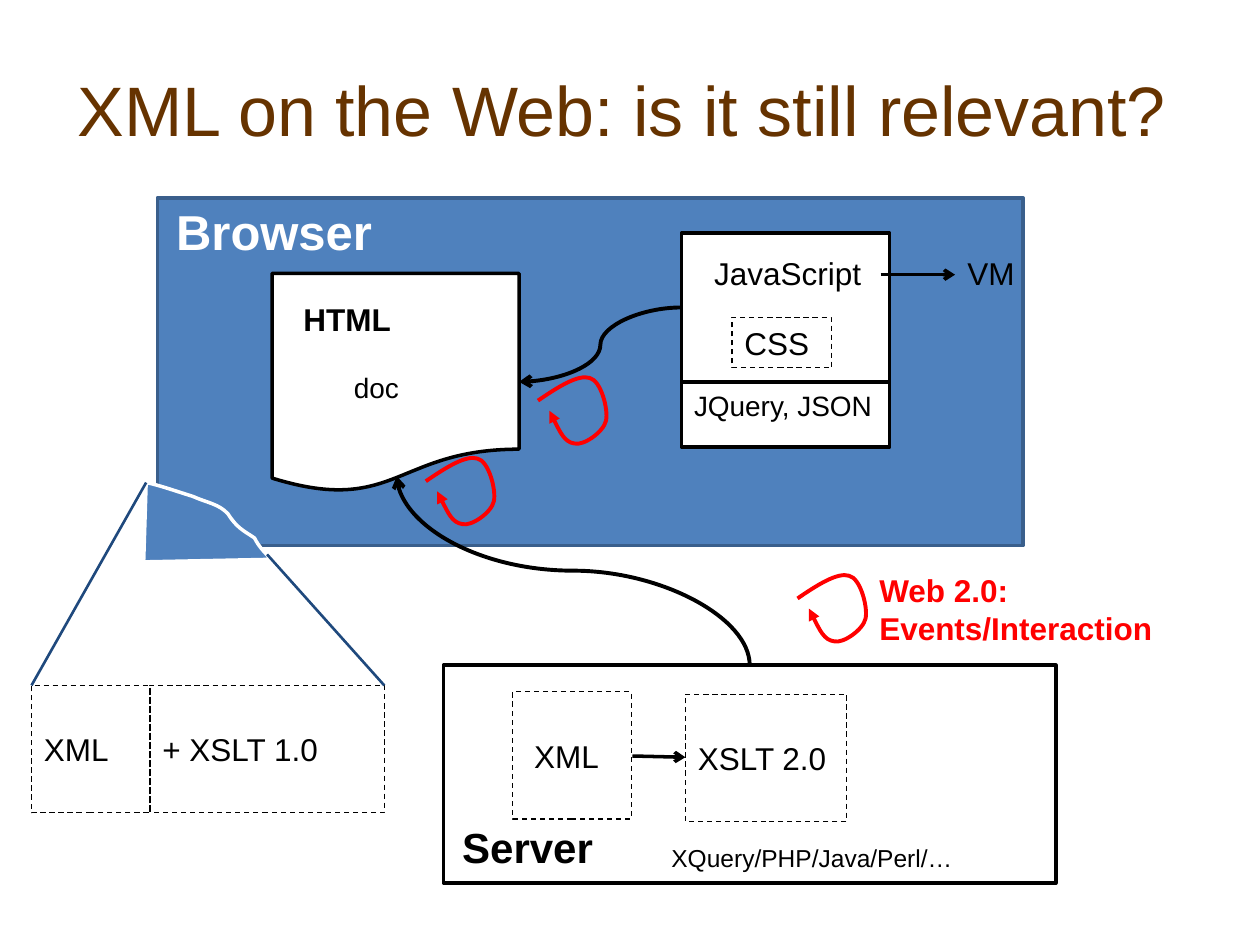
from lxml import etree
from pptx import Presentation
from pptx.dml.color import RGBColor
from pptx.enum.dml import MSO_LINE
from pptx.enum.shapes import MSO_CONNECTOR, MSO_SHAPE
from pptx.enum.text import MSO_ANCHOR, PP_ALIGN
from pptx.oxml.ns import qn
from pptx.util import Inches, Pt

RECT, DOCUMENT = MSO_SHAPE.RECTANGLE, MSO_SHAPE.FLOWCHART_DOCUMENT
STRAIGHT, CURVE = MSO_CONNECTOR.STRAIGHT, MSO_CONNECTOR.CURVE
DASH, MIDDLE = MSO_LINE.DASH, MSO_ANCHOR.MIDDLE
LEFT, CENTER = PP_ALIGN.LEFT, PP_ALIGN.CENTER

BLACK = RGBColor(0x00, 0x00, 0x00)
WHITE = RGBColor(0xFF, 0xFF, 0xFF)
BLUE = RGBColor(0x4F, 0x81, 0xBD)
EDGE = RGBColor(0x3A, 0x5F, 0x8C)
NAVY = RGBColor(0x1F, 0x49, 0x7D)
RED = RGBColor(0xFF, 0x00, 0x00)
BROWN = RGBColor(0x66, 0x33, 0x00)

prs = Presentation()
prs.slide_width, prs.slide_height = Inches(10), Inches(7.5)
COL, ROW = prs.slide_width / 100, prs.slide_height / 75
s = prs.slides.add_slide(prs.slide_layouts[6])


def write(text, x, y, w, h, shape=None, fill=None, line=None, width=2, dash=None,
          size=18, color=BLACK, bold=False, align=LEFT, indent=1, wrap=True):
    at = [round(v) for v in (x * COL, y * ROW, w * COL, h * ROW)]
    if shape is None:
        sp = s.shapes.add_textbox(*at)
    else:
        sp = s.shapes.add_shape(shape, *at)
        sp.shadow.inherit = False
        sp.line.color.rgb = line
        sp.line.width = Pt(width)
        if dash is not None:
            sp.line.dash_style = dash
        if fill is None:
            sp.fill.background()
        else:
            sp.fill.solid()
            sp.fill.fore_color.rgb = fill
    if text:
        tf = sp.text_frame
        tf.word_wrap = wrap
        tf.vertical_anchor = MIDDLE
        tf.margin_left = round(indent * COL)
        p = tf.paragraphs[0]
        p.alignment = align
        r = p.add_run()
        r.text = text
        r.font.name, r.font.size, r.font.bold = "Arial", Pt(size), bold
        r.font.color.rgb = color


def draw_curve(start, controls, corners=(), fill=None, line=RED, width=2.25):
    points = [(x * COL, y * ROW) for x, y in (start, *controls, *corners)]
    fb = s.shapes.build_freeform(*points[0])
    fb.add_line_segments(points[1:], close=bool(corners))
    sp = fb.convert_to_shape()
    segments = list(sp._element.iter(qn("a:lnTo")))[:len(controls)]
    for i in range(0, len(segments), 3):
        cubic = etree.Element(qn("a:cubicBezTo"))
        segments[i].addprevious(cubic)
        for segment in segments[i:i + 3]:
            cubic.append(segment[0])
            segment.getparent().remove(segment)
    sp.shadow.inherit = False
    sp.line.color.rgb = line
    sp.line.width = Pt(width)
    if fill is None:
        sp.fill.background()
        ln = sp._element.spPr.find(qn("a:ln"))
        etree.SubElement(ln, qn("a:tailEnd"), type="triangle")
    else:
        sp.fill.solid()
        sp.fill.fore_color.rgb = fill


write("XML on the Web: is it still relevant?", 3.1, 1.4, 92.5, 14.4,
      size=40, color=BROWN, align=CENTER, wrap=False)

write("", 12.5, 15.7, 68.7, 27.6, RECT, BLUE, EDGE)
write("", 21.6, 21.7, 19.6, 17.4, DOCUMENT, WHITE, BLACK)
write("Browser", 13, 15.5, 22.4, 5.7, size=28, color=WHITE, bold=True)
write("HTML", 23.1, 23.3, 15, 4, bold=True)
write("doc", 27.1, 28.9, 8.7, 3.7, size=16)

write("", 35.2, 52.8, 48.6, 17.3, RECT, WHITE, BLACK)
write("Server", 35.7, 64.7, 22, 5, size=24, bold=True)
write("XML", 40.7, 54.9, 9.4, 10.1, RECT, line=BLACK, width=0.75, dash=DASH, indent=1.7)
write("XSLT 2.0", 54.4, 55.1, 12.8, 10.1, RECT, line=BLACK, width=0.75, dash=DASH)
write("XQuery/PHP/Java/Perl/…", 52.3, 66.4, 29.9, 3.4, size=14)

write("", 54.1, 18.5, 16.5, 11.8, RECT, WHITE, BLACK)
write("", 54.1, 30.3, 16.5, 5.2, RECT, WHITE, BLACK)
write("JavaScript", 55.7, 19.7, 14.2, 4)
write("CSS", 58.1, 25.2, 7.9, 4, RECT, line=BLACK, width=0.75, dash=DASH)
write("JQuery, JSON", 54.1, 30.3, 16.5, 3.7, size=16)
write("VM", 75.8, 19.7, 5.8, 4, wrap=False)

write("XML", 2.5, 54.4, 9.4, 10.1, RECT, line=BLACK, width=0.75, dash=DASH)
write("+ XSLT 1.0", 11.9, 54.4, 18.6, 10.1, RECT, line=BLACK, width=0.75, dash=DASH)
write("Web 2.0: Events/Interaction", 68.8, 44.8, 32.2, 7, color=RED, bold=True)

LOOP = [(1.6, -1.1), (3.2, -2.1), (4.1, -1.8), (5, -1.6), (5.6, 0.7), (5.4, 1.6),
        (5.2, 2.5), (3.6, 3.6), (2.9, 3.4), (2.1, 3.3), (1.5, 2), (0.9, 0.8)]
for x, y in [(42.7, 31.8), (33.8, 38.2), (63.3, 47.5)]:
    draw_curve((x, y), [(x + dx, y + dy) for dx, dy in LOOP])

TORN_EDGE = [(12.6, 38.5), (14, 39), (15.3, 39.4), (16.4, 39.9), (17.4, 40), (18.1, 40.8),
             (18.8, 41.9), (19.3, 42.1), (20.2, 42.7), (20.6, 43.5), (21, 43.8), (21.5, 44.4)]
draw_curve((11.6, 38.3), TORN_EDGE, [(11.4, 44.6)], fill=BLUE, line=WHITE, width=2)

for kind, x1, y1, x2, y2, color, width, arrow, turn in [
    (STRAIGHT, 50.2, 60, 54.4, 60.1, BLACK, 2, True, 0),
    (STRAIGHT, 69.9, 21.8, 75.8, 21.8, BLACK, 2, True, 0),
    (CURVE, 54.1, 24.4, 41.2, 30.3, BLACK, 2.25, True, 0),
    (CURVE, 38, 59.3, 53, 31.3, BLACK, 2.25, True, 270),
    (STRAIGHT, 11.6, 38.3, 2.5, 54.4, NAVY, 1.5, False, 0),
    (STRAIGHT, 21.2, 44, 30.5, 54.4, NAVY, 1.5, False, 0),
]:
    sp = s.shapes.add_connector(
        kind, round(x1 * COL), round(y1 * ROW), round(x2 * COL), round(y2 * ROW))
    sp.line.color.rgb = color
    sp.line.width = Pt(width)
    spPr = sp._element.spPr
    if arrow:
        etree.SubElement(spPr.find(qn("a:ln")), qn("a:tailEnd"), type="arrow")
    if turn:
        spPr.find(qn("a:xfrm")).set("rot", str(turn * 60000))
    etree.SubElement(spPr, qn("a:effectLst"))

prs.save("out.pptx")
